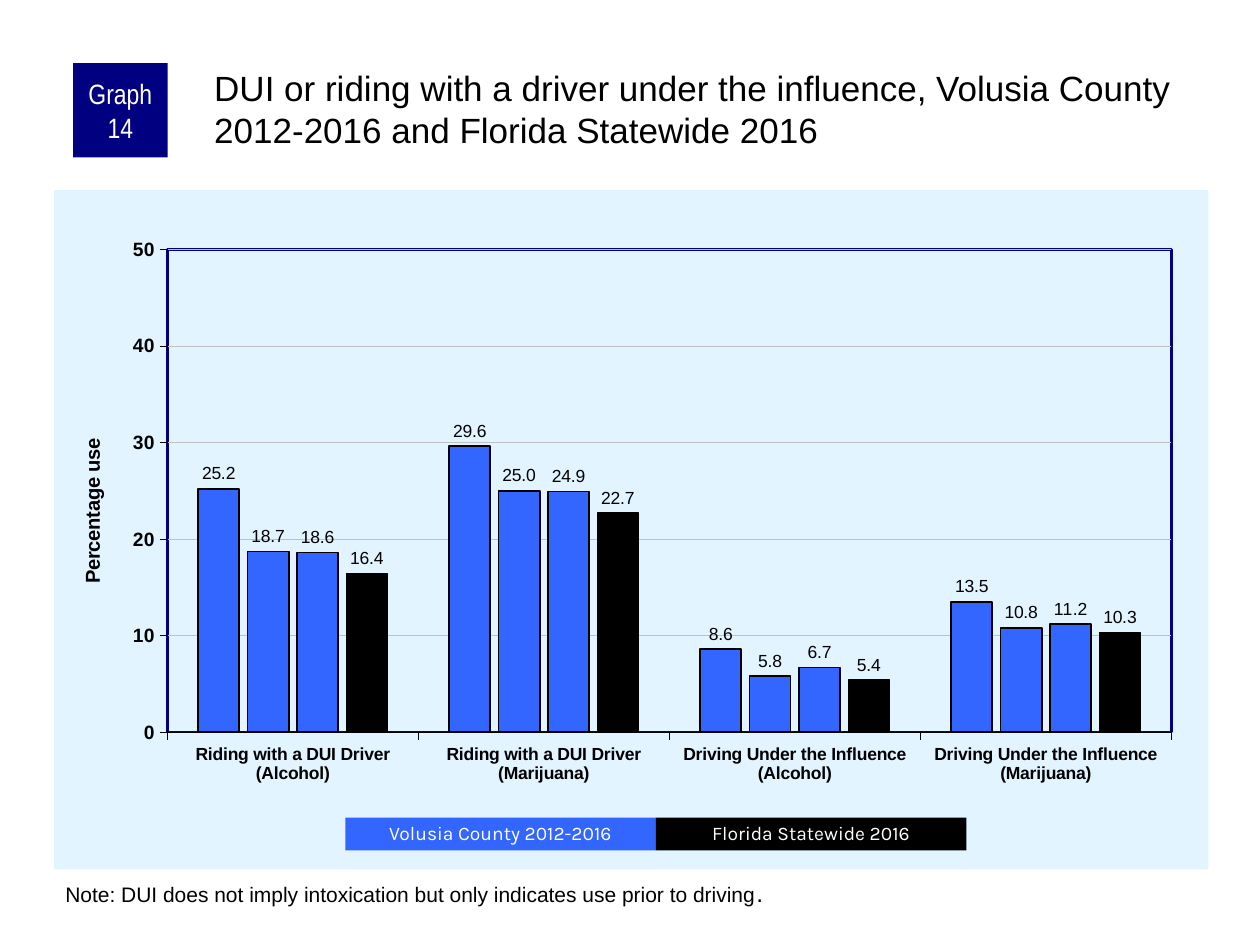
from lxml import etree
from pptx import Presentation
from pptx import util as u
from pptx.chart.data import CategoryChartData
from pptx.dml.color import RGBColor
from pptx.enum import chart as charts, shapes, text
from pptx.oxml import parse_xml
from pptx.oxml.ns import qn

Inches, Pt = u.Inches, u.Pt
NAVY, BLUE, BLACK, WHITE = "000080", "3366FF", "000000", "FFFFFF"
PALE, GREY = "E1F4FF", "C0C0C0"
NAMESPACES = (
    'xmlns:c="http://schemas.openxmlformats.org/drawingml/2006/chart" '
    'xmlns:a="http://schemas.openxmlformats.org/drawingml/2006/main"'
)

CATEGORIES = [
    f"{behavior} ({substance})"
    for behavior in ("Riding with a DUI Driver", "Driving Under the Influence")
    for substance in ("Alcohol", "Marijuana")
]
# Values, fill, outline width in points
SERIES = [
    ((25.2, 29.6, 8.6, 13.5), BLUE, 1),
    ((18.7, 25.0, 5.8, 10.8), BLUE, 1),
    ((18.6, 24.9, 6.7, 11.2), BLUE, 0.75),
    ((16.4, 22.7, 5.4, 10.3), BLACK, 0.75),
]


def color(hex_string):
    return RGBColor.from_string(hex_string)


def set_fill(fill, hex_string):
    fill.solid()
    fill.fore_color.rgb = color(hex_string)


def set_line(line, hex_string, width):
    line.color.rgb = color(hex_string)
    line.width = Pt(width)


def set_font(font, size, hex_string=BLACK, name="Arial", bold=False):
    font.size = Pt(size)
    font.name = name
    font.bold = bold
    font.color.rgb = color(hex_string)


def add_run(paragraph, words, size, hex_string=BLACK, name="Arial"):
    run = paragraph.add_run()
    run.text = words
    set_font(run.font, size, hex_string, name)


def set_margins(frame, left, top, right, bottom):
    frame.margin_left, frame.margin_top = Inches(left), Inches(top)
    frame.margin_right, frame.margin_bottom = Inches(right), Inches(bottom)


def add_label_box(slide, box, words, fill, size, name):
    """A filled rectangle with centred white text."""
    shape = slide.shapes.add_shape(shapes.MSO_SHAPE.RECTANGLE, *map(Inches, box))
    shape.shadow.inherit = False
    set_fill(shape.fill, fill)
    shape.line.fill.background()
    frame = shape.text_frame
    frame.word_wrap = True
    frame.vertical_anchor = text.MSO_ANCHOR.MIDDLE
    paragraph = frame.paragraphs[0]
    paragraph.alignment = text.PP_ALIGN.CENTER
    add_run(paragraph, words, size, WHITE, name)
    return frame


def add_text(slide, box, runs):
    frame = slide.shapes.add_textbox(*map(Inches, box)).text_frame
    frame.word_wrap = True
    for words, size in runs:
        add_run(frame.paragraphs[0], words, size)
    return frame


def add_header(slide, box):
    left, top, width, height = box
    # Graph number
    badge = add_label_box(slide, (left, top, 0.75, 0.75), "Graph 14", NAVY, 16, "Arial Narrow")
    set_margins(badge, 0.05, 0, 0.05, 0)
    # Heading
    heading = add_text(slide, (left + 1.09, top, width - 1.09, height), [
        ("DUI or riding with a driver under the influence, Volusia County "
         "2012-2016 and Florida Statewide 2016", 20),
    ])
    set_margins(heading, 0.03, 0.03, 0, 0)


def style_axis(axis, size):
    axis.major_tick_mark = charts.XL_TICK_MARK.OUTSIDE
    axis.minor_tick_mark = charts.XL_TICK_MARK.NONE
    set_font(axis.tick_labels.font, size, bold=True)
    set_line(axis.format.line, BLACK, 0.25)


def style_areas(chart):
    """Chart background, plot frame and plot position, which need XML."""
    chart_space = chart.element
    chart_space.find(qn("c:chart")).addnext(parse_xml(
        f'<c:spPr {NAMESPACES}><a:solidFill><a:srgbClr val="{PALE}"/></a:solidFill>'
        '<a:ln><a:noFill/></a:ln></c:spPr>'))
    plot_area = chart_space.find(".//" + qn("c:plotArea"))
    plot_area.append(parse_xml(
        f'<c:spPr {NAMESPACES}><a:noFill/><a:ln w="{Pt(1.5)}"><a:solidFill>'
        f'<a:srgbClr val="{NAVY}"/></a:solidFill></a:ln></c:spPr>'))
    for old_layout in plot_area.findall(qn("c:layout")):
        plot_area.remove(old_layout)
    layout = parse_xml(f"<c:layout {NAMESPACES}><c:manualLayout/></c:layout>")
    settings = [("layoutTarget", "inner"), ("xMode", "edge"), ("yMode", "edge"),
                ("x", 0.098), ("y", 0.087), ("w", 0.87), ("h", 0.711)]
    for tag, value in settings:
        etree.SubElement(layout[0], qn(f"c:{tag}")).set("val", str(value))
    plot_area.insert(0, layout)


def add_chart(slide, box):
    data = CategoryChartData(number_format="0.0")
    data.categories = CATEGORIES
    for number, (values, _, _) in enumerate(SERIES, 1):
        data.add_series(f"Series {number}", values)
    chart = slide.shapes.add_chart(
        charts.XL_CHART_TYPE.COLUMN_CLUSTERED, *map(Inches, box), data).chart
    chart.has_title = False
    chart.has_legend = False
    style_areas(chart)
    set_font(chart.font, 11.5)

    # Axes
    style_axis(chart.category_axis, 10)
    value_axis = chart.value_axis
    style_axis(value_axis, 11)
    value_axis.minimum_scale, value_axis.maximum_scale = 0, 50
    value_axis.major_unit = 10
    value_axis.tick_labels.number_format = "0"
    value_axis.tick_labels.number_format_is_linked = False
    set_line(value_axis.major_gridlines.format.line, GREY, 0.25)
    title = value_axis.axis_title.text_frame.paragraphs[0].add_run()
    title.text = "Percentage use"
    set_font(title.font, 11.5, bold=True)

    # Columns and their values
    plot = chart.plots[0]
    plot.gap_width, plot.overlap = 150, -20
    plot.vary_by_categories = False
    for series, (_, fill, width) in zip(plot.series, SERIES):
        set_fill(series.format.fill, fill)
        set_line(series.format.line, BLACK, width)
        labels = series.data_labels
        labels.show_value = True
        labels.number_format = "0.0"
        labels.number_format_is_linked = False
        labels.position = charts.XL_LABEL_POSITION.OUTSIDE_END
        set_font(labels.font, 10)


def add_legend(slide, box):
    left, top, width, height = box
    entries = [("Volusia County 2012-2016", BLUE), ("Florida Statewide 2016", BLACK)]
    entry_width = width / len(entries)
    for index, (words, fill) in enumerate(entries):
        entry_box = (left + index * entry_width, top, entry_width, height)
        frame = add_label_box(slide, entry_box, words, fill, 11, "Karla")
        frame.paragraphs[0].line_spacing = 0.9


def add_note(slide, box):
    add_text(slide, box, [
        ("Note: DUI does not imply intoxication but only indicates use prior to driving", 12),
        (".", 14),
    ])


def main():
    presentation = Presentation()
    presentation.slide_width, presentation.slide_height = Inches(10), Inches(7.5)
    slide = presentation.slides.add_slide(presentation.slide_layouts[6])
    add_chart(slide, (0.43, 1.51, 9.16, 5.39))
    add_header(slide, (0.58, 0.5, 9.01, 0.83))
    add_note(slide, (0.42, 6.92, 9.17, 0.34))
    add_legend(slide, (2.74, 6.49, 4.93, 0.26))
    presentation.save("out.pptx")


if __name__ == "__main__":
    main()
